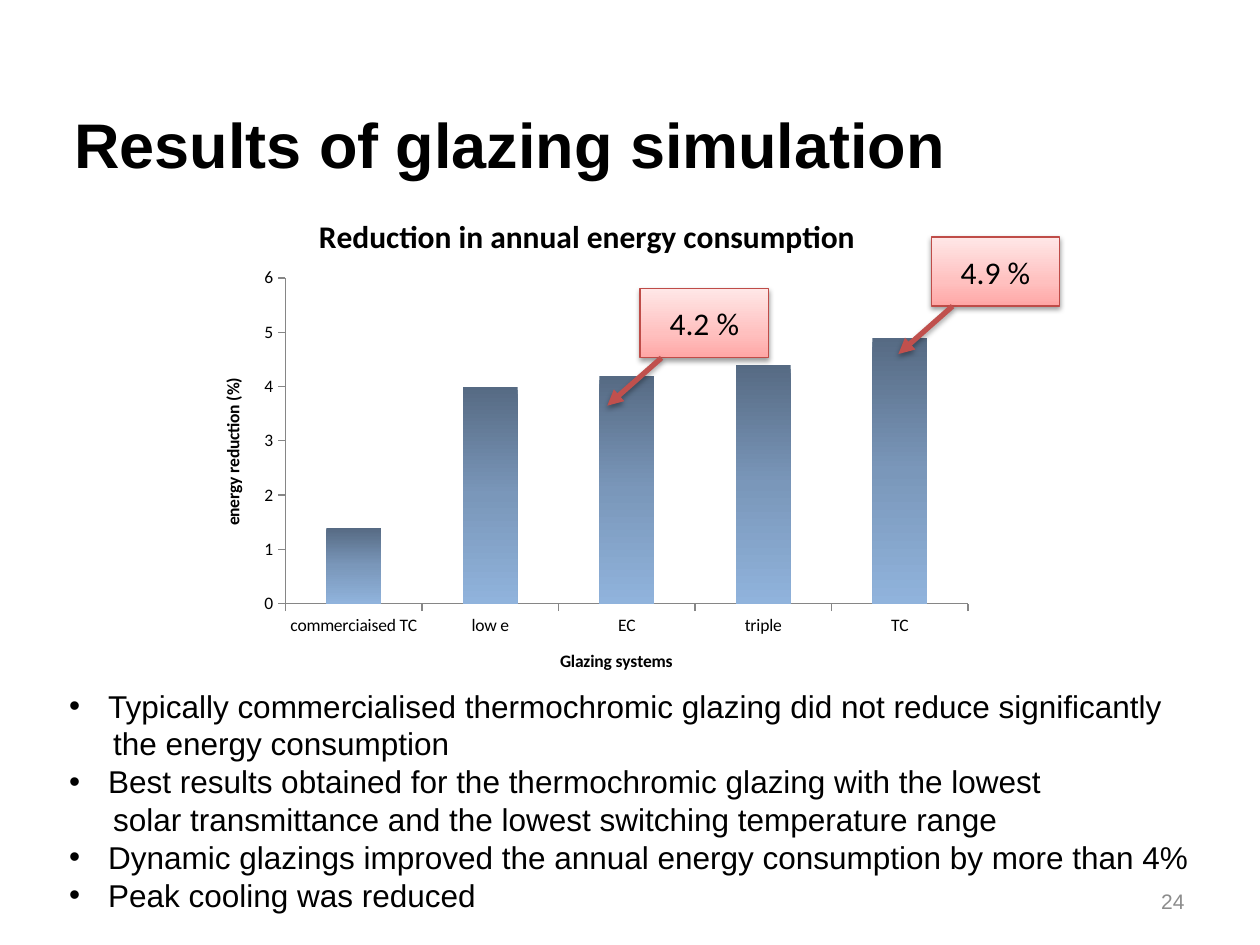
import pptx
import pptx.chart.data
import pptx.dml.color
import pptx.enum.chart
import pptx.enum.shapes
import pptx.enum.text
import pptx.oxml
import pptx.oxml.ns
import pptx.util
from lxml import etree

EMU_PER_PX = 9144  # 100 px to the inch
qn = pptx.oxml.ns.qn
ALIGN = pptx.enum.text.PP_ALIGN
ANCHOR = pptx.enum.text.MSO_ANCHOR


def px(length):
    return pptx.util.Emu(length * EMU_PER_PX)


def color(hex_string):
    return pptx.dml.color.RGBColor.from_string(hex_string)


def add_element(parent, tag, **attributes):
    element = etree.SubElement(parent, qn(tag))
    for name, value in attributes.items():
        element.set(name, str(value))
    return element


def set_gradient(fill, owner, stops, angle):
    """Fill with (percent, colour) stops; the angle runs counter-clockwise."""
    fill.gradient()
    fill.gradient_angle = angle
    stop_list = next(owner.iter(qn("a:gsLst")))
    for stop in list(stop_list):
        stop_list.remove(stop)
    for percent, hex_string in stops:
        stop = add_element(stop_list, "a:gs", pos=percent * 1000)
        add_element(stop, "a:srgbClr", val=hex_string)


def add_shadow(shape, opacity, distance):
    effects = add_element(shape._element.spPr, "a:effectLst")
    shadow = add_element(effects, "a:outerShdw", blurRad=pptx.util.Pt(3.1),
                         dist=pptx.util.Pt(distance), dir=5400000, rotWithShape=0)
    shadow_color = add_element(shadow, "a:srgbClr", val="000000")
    add_element(shadow_color, "a:alpha", val=opacity * 1000)


class SlideBuilder:
    text_font = "Arial"
    chart_font = "Calibri"
    black = "000000"
    axis_gray = "868686"
    bar_stops = [(0, "566A83"), (50, "7A97BA"), (100, "90B3DC")]
    callout_stops = [(0, "FFA6A5"), (35, "FFC0BF"), (100, "FFE7E7")]
    callout_line = "BF4C48"
    arrow_color = "C0504D"

    def __init__(self, presentation):
        self.slide = presentation.slides.add_slide(presentation.slide_layouts[6])

    def style_font(self, font, size, hex_string=black, name=chart_font, bold=False):
        font.name = name
        font.size = pptx.util.Pt(size)
        font.bold = bold
        font.color.rgb = color(hex_string)

    def run(self, paragraph, text, size, **style):
        run = paragraph.add_run()
        run.text = text
        self.style_font(run.font, size, **style)

    def text_box(self, left, top, width, height, anchor=ANCHOR.TOP):
        frame = self.slide.shapes.add_textbox(*map(px, (left, top, width, height))).text_frame
        frame.word_wrap = True
        frame.vertical_anchor = anchor
        return frame

    def label(self, text, box, size, align=ALIGN.LEFT, anchor=ANCHOR.TOP, **style):
        paragraph = self.text_box(*box, anchor=anchor).paragraphs[0]
        paragraph.alignment = align
        self.run(paragraph, text, size, name=self.text_font, **style)

    def bullets(self, points, box):
        """Each point is a list of lines; only its first line has a bullet."""
        frame = self.text_box(*box)
        lines = [(number, line) for point in points for number, line in enumerate(point)]
        for index, (number, line) in enumerate(lines):
            paragraph = frame.add_paragraph() if index else frame.paragraphs[0]
            paragraph.alignment = ALIGN.JUSTIFY
            properties = paragraph._p.get_or_add_pPr()
            if number == 0:
                properties.set("marL", str(px(31)))
                properties.set("indent", str(px(-31)))
                add_element(properties, "a:buFont", typeface=self.text_font)
                add_element(properties, "a:buChar", char="•")
            else:
                properties.set("marL", str(px(35)))
            self.run(paragraph, line, 18, name=self.text_font)

    def column_chart(self, title, category_title, value_title, values, box):
        data = pptx.chart.data.CategoryChartData()
        data.categories = list(values)
        data.add_series("Series 1", list(values.values()))
        chart = self.slide.shapes.add_chart(
            pptx.enum.chart.XL_CHART_TYPE.COLUMN_CLUSTERED, *map(px, box), data).chart
        self.style_font(chart.font, 10)
        chart.has_legend = False
        chart.has_title = True
        self.run(chart.chart_title.text_frame.paragraphs[0], title, 18, bold=True)
        chart.chart_title.include_in_layout = False

        plot = chart.plots[0]
        plot.gap_width = 150
        plot.vary_by_categories = False
        series = plot.series[0]
        set_gradient(series.format.fill, series._element, self.bar_stops, 270)

        for axis, axis_title in ((chart.category_axis, category_title),
                                 (chart.value_axis, value_title)):
            axis.has_major_gridlines = False
            axis.major_tick_mark = pptx.enum.chart.XL_TICK_MARK.OUTSIDE
            axis.format.line.color.rgb = color(self.axis_gray)
            axis.has_title = True
            self.run(axis.axis_title.text_frame.paragraphs[0], axis_title, 10, bold=True)
        chart.value_axis.minimum_scale = 0
        chart.value_axis.maximum_scale = 6
        chart.value_axis.major_unit = 1
        self.place_plot(chart, x=0.12, y=0.17, w=0.86, h=0.64)

    def place_plot(self, chart, **fractions):
        plot_area = next(chart._chartSpace.iter(qn("c:plotArea")))
        for old_layout in plot_area.findall(qn("c:layout")):
            plot_area.remove(old_layout)
        layout = etree.Element(qn("c:layout"))
        plot_area.insert(0, layout)
        manual = add_element(layout, "c:manualLayout")
        add_element(manual, "c:layoutTarget", val="inner")
        for name in "xy":
            add_element(manual, f"c:{name}Mode", val="edge")
        for name, fraction in fractions.items():
            add_element(manual, f"c:{name}", val=fraction)

    def callout(self, text, left, top):
        """A boxed value with an arrow down to its column."""
        width, height = 102, 55
        shape = self.slide.shapes.add_shape(
            pptx.enum.shapes.MSO_SHAPE.RECTANGLE, *map(px, (left, top, width, height)))
        set_gradient(shape.fill, shape._element.spPr, self.callout_stops, 90)
        shape.line.color.rgb = color(self.callout_line)
        shape.line.width = pptx.util.Pt(0.75)
        add_shadow(shape, opacity=38, distance=1.6)
        shape.text_frame.vertical_anchor = ANCHOR.MIDDLE
        paragraph = shape.text_frame.paragraphs[0]
        paragraph.alignment = ALIGN.CENTER
        self.run(paragraph, text, 18)
        start_x, start_y = left + 17, top + height
        self.arrow(start_x, start_y, start_x - 43, start_y + 38)

    def arrow(self, *ends):
        connector = self.slide.shapes.add_connector(
            pptx.enum.shapes.MSO_CONNECTOR.STRAIGHT, *map(px, ends))
        connector.line.color.rgb = color(self.arrow_color)
        connector.line.width = pptx.util.Pt(3)
        add_element(connector.line._get_or_add_ln(), "a:tailEnd", type="triangle")
        add_shadow(connector, opacity=35, distance=1.8)


def main():
    presentation = pptx.Presentation()
    presentation.slide_width, presentation.slide_height = px(1000), px(750)
    builder = SlideBuilder(presentation)
    builder.column_chart(
        "Reduction in annual energy consumption", "Glazing systems", "energy reduction (%)",
        {"commerciaised TC": 1.4, "low e": 4, "EC": 4.2, "triple": 4.4, "TC": 4.9},
        (151, 152, 630, 404))
    builder.label("Results of glazing simulation", (49, 79, 835, 71), 36, bold=True)
    builder.bullets([
        ["Typically commercialised thermochromic glazing did not reduce significantly",
         "the energy consumption"],
        ["Best results obtained for the thermochromic glazing with the lowest",
         "solar transmittance and the lowest switching temperature range"],
        ["Dynamic glazings improved the annual energy consumption by more than 4%"],
        ["Peak cooling was reduced"],
    ], (45, 540, 914, 192))
    builder.callout("4.2 %", 508, 229)
    builder.callout("4.9 %", 739, 188)
    builder.label("24", (717, 695, 233, 40), 12, align=ALIGN.RIGHT,
                  anchor=ANCHOR.MIDDLE, hex_string="8C8C8C")
    presentation.save("out.pptx")


if __name__ == "__main__":
    main()
